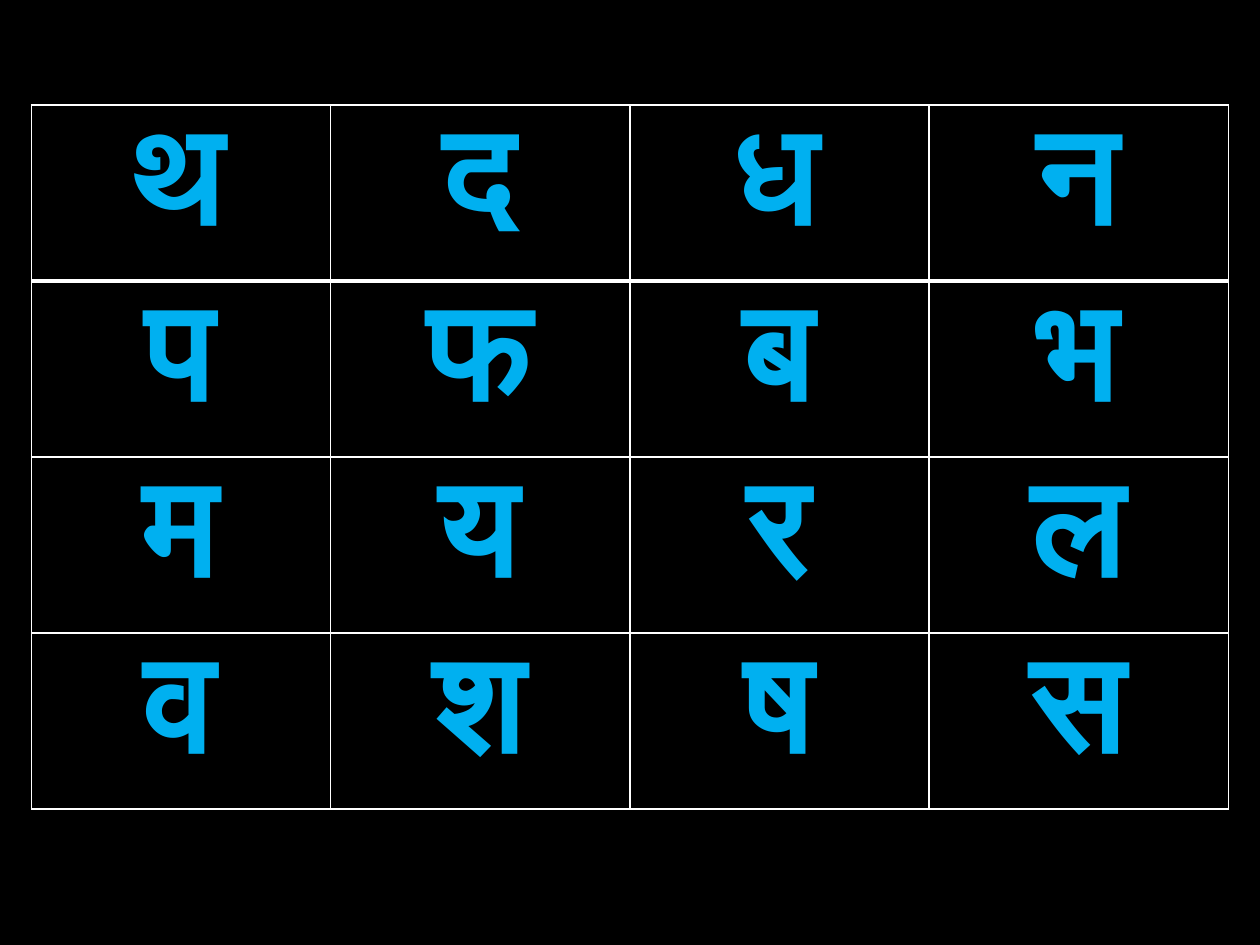
"""Build a slide with a four by four grid of Devanagari consonants."""
from lxml import etree
from pptx import Presentation
from pptx import util as u
from pptx.dml.color import RGBColor
from pptx.enum import text
from pptx.oxml.ns import qn


def write(cell, letter, *, size, font, color, bold):
    paragraph = cell.text_frame.paragraphs[0]
    paragraph.alignment = text.PP_ALIGN.CENTER
    run = paragraph.add_run()
    run.text = letter
    run.font.size = u.Pt(size)
    run.font.name = font
    run.font.bold = bold
    run.font.color.rgb = RGBColor.from_string(color)


def add_border(cell, side, width, color):
    line = etree.SubElement(cell._tc.get_or_add_tcPr(), qn(f"a:ln{side}"), w=str(u.Pt(width)))
    fill = etree.SubElement(line, qn("a:solidFill"))
    etree.SubElement(fill, qn("a:srgbClr"), val=color)


letters = ["थदधन", "पफबभ", "मयरल", "वशषस"]
column_width, row_height = 171, 100.6

prs = Presentation()
prs.slide_width, prs.slide_height = u.Pt(720), u.Pt(540)
slide = prs.slides.add_slide(prs.slide_layouts[6])
slide.background.fill.solid()
slide.background.fill.fore_color.rgb = RGBColor.from_string("000000")

alphabet = slide.shapes.add_table(
    4, 4, u.Pt(18), u.Pt(60), u.Pt(4 * column_width), u.Pt(4 * row_height)
).table
alphabet.first_row = alphabet.horz_banding = False
for column in alphabet.columns:
    column.width = u.Pt(column_width)

for r, row_letters in enumerate(letters):
    alphabet.rows[r].height = u.Pt(row_height)
    for c, letter in enumerate(row_letters):
        cell = alphabet.cell(r, c)
        heavy_side = {0: "B", 1: "T"}.get(r)
        for side in "LRTB":
            add_border(cell, side, 3 if side == heavy_side else 1, "FFFFFF")
        cell.fill.background()
        write(cell, letter, size=80, font="Quicksand", color="00B0F0", bold=True)

prs.save("out.pptx")
